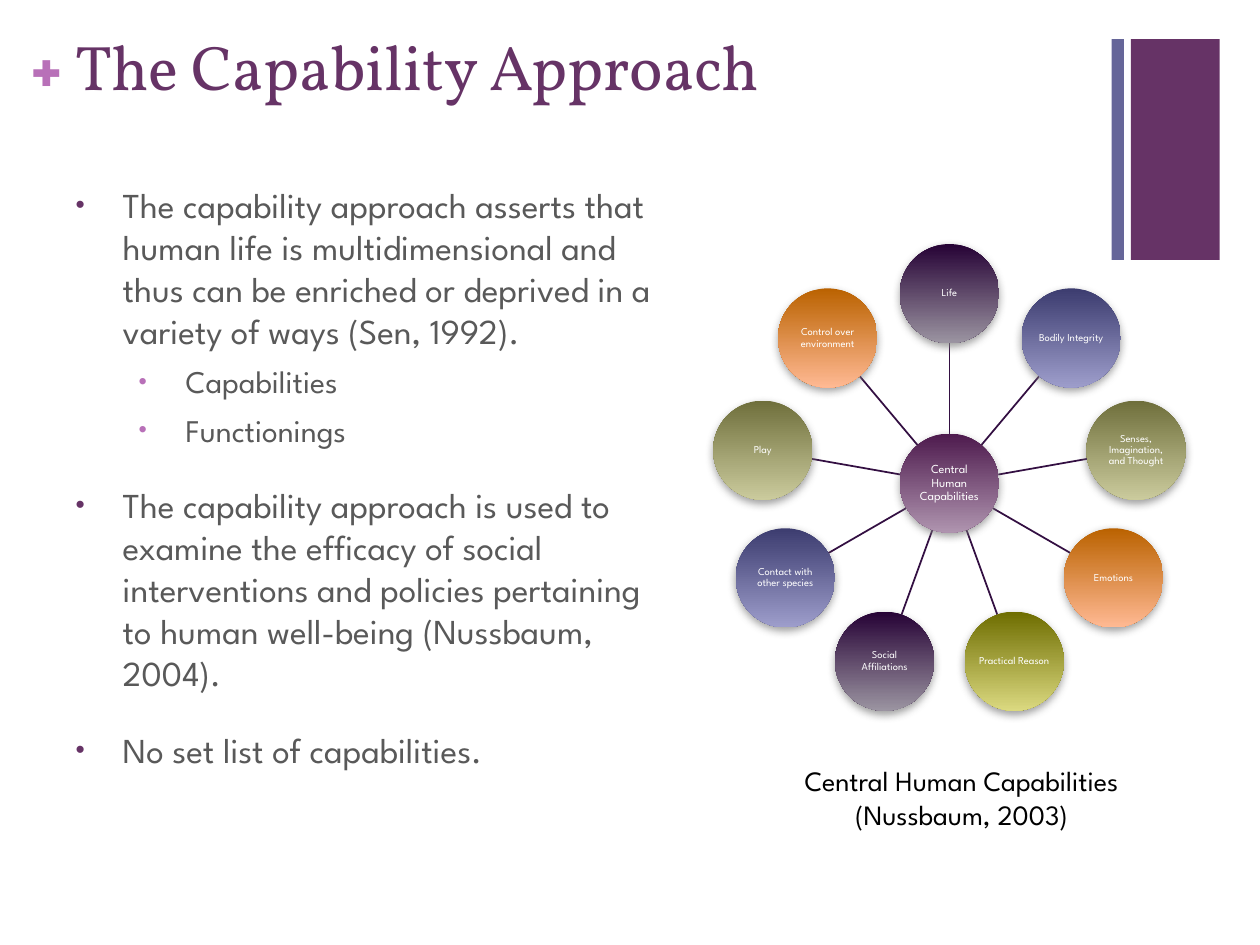
from math import cos, radians, sin

from lxml import etree
from pptx import Presentation
from pptx.dml.color import RGBColor
from pptx.enum.shapes import MSO_CONNECTOR, MSO_SHAPE
from pptx.enum.text import MSO_ANCHOR, MSO_AUTO_SIZE, PP_ALIGN
from pptx.oxml.ns import qn
from pptx.util import Cm, Pt

RECT, OVAL = MSO_SHAPE.RECTANGLE, MSO_SHAPE.OVAL
STRAIGHT = MSO_CONNECTOR.STRAIGHT
TOP, MIDDLE = MSO_ANCHOR.TOP, MSO_ANCHOR.MIDDLE
LEFT, CENTER = PP_ALIGN.LEFT, PP_ALIGN.CENTER
NO_FIT = MSO_AUTO_SIZE.NONE
SANS, SERIF = "League Spartan", "Vollkorn"
PURPLE, VIOLET, BLUE = "663366", "B870B8", "666699"


def rgb(value):
    return RGBColor.from_string(value)


def add_run(p, text, size, color, font=SANS, bold=False):
    r = p.add_run()
    r.text = text
    r.font.size = Pt(size)
    r.font.name = font
    r.font.bold = bold
    r.font.color.rgb = rgb(color)


prs = Presentation()
prs.slide_width, prs.slide_height = Cm(25.4), Cm(19.05)
s = prs.slides.add_slide(prs.slide_layouts[1])

for left, width, color in [(22.8, 1.79, PURPLE), (22.41, 0.25, BLUE)]:
    sp = s.shapes.add_shape(RECT, Cm(left), Cm(0.79), Cm(width), Cm(4.45))
    sp.shadow.inherit = False
    sp.fill.solid()
    sp.fill.fore_color.rgb = rgb(color)
    sp.line.fill.background()

sp = s.shapes.add_textbox(Cm(0.61), Cm(0.64), Cm(0.74), Cm(1.55))
tf = sp.text_frame
tf.margin_left = tf.margin_right = tf.margin_top = tf.margin_bottom = 0
add_run(tf.paragraphs[0], "+", 36, VIOLET, bold=True)

title = s.shapes.title
title.left, title.top, title.width, title.height = Cm(1.27), Cm(0.43), Cm(21.77), Cm(3.81)
tf = title.text_frame
tf.auto_size = NO_FIT
tf.vertical_anchor = TOP
p = tf.paragraphs[0]
p.alignment = LEFT
add_run(p, "The Capability Approach", 36, PURPLE, SERIF)

body = s.placeholders[1]
body.left, body.top, body.width, body.height = Cm(1.27), Cm(3.58), Cm(12.29), Cm(13.49)
tf = body.text_frame
tf.auto_size = NO_FIT
points = [
    (0, "The capability approach asserts that human life is multidimensional and thus "
        "can be enriched or deprived in a variety of ways (Sen, 1992)."),
    (1, "Capabilities"),
    (1, "Functionings"),
    (0, "The capability approach is used to examine the efficacy of social interventions "
        "and policies pertaining to human well-being (Nussbaum, 2004)."),
    (0, "No set list of capabilities."),
]
levels = [(20, 20, 0.95, PURPLE), (18, 6, 2.22, VIOLET)]
for i, (level, text) in enumerate(points):
    size, before, indent, color = levels[level]
    p = tf.paragraphs[0] if i == 0 else tf.add_paragraph()
    p.level = level
    p.space_before = Pt(before)
    add_run(p, text, size, "595959")
    pPr = p._p.get_or_add_pPr()
    pPr.set("marL", str(Cm(indent)))
    pPr.set("indent", str(Cm(-0.95)))
    clr = etree.SubElement(pPr, qn("a:buClr"))
    etree.SubElement(clr, qn("a:srgbClr"), val=color)
    etree.SubElement(pPr, qn("a:buSzPct"), val="75000")
    etree.SubElement(pPr, qn("a:buFont"), typeface="Arial")
    etree.SubElement(pPr, qn("a:buChar"), char="•")

cx, cy, orbit, radius = 19.14, 9.74, 3.82, 1
plum, indigo = ("260235", "9B94A1"), ("3C3C6F", "9D9DCB")
sage, orange, olive = ("6F6F3C", "CBCB9D"), ("BA6200", "FFB993"), ("6E6D00", "DBD980")
capabilities = [
    ("Life", plum),
    ("Bodily Integrity", indigo),
    ("Senses, Imagination, and Thought", sage),
    ("Emotions", orange),
    ("Practical Reason", olive),
    ("Social Affiliations", plum),
    ("Contact with other species", indigo),
    ("Play", sage),
    ("Control over environment", orange),
]
wheel = s.shapes.add_group_shape()
circles = [(cx, cy, "Central Human Capabilities", 7, ("4D1A4D", "AF94AF"))]
for i, (text, colors) in enumerate(capabilities):
    angle = radians(360 / len(capabilities) * i - 90)
    dx, dy = cos(angle), sin(angle)
    circles.append((cx + orbit * dx, cy + orbit * dy, text, 6, colors))
    near, far = radius, orbit - radius
    spoke = wheel.shapes.add_connector(STRAIGHT, Cm(cx + near * dx), Cm(cy + near * dy),
                                       Cm(cx + far * dx), Cm(cy + far * dy))
    spoke.line.color.rgb = rgb("330F42")
    spoke.line.width = Pt(1)
    etree.SubElement(spoke._element.spPr, qn("a:effectLst"))

for x, y, text, size, colors in circles:
    sp = wheel.shapes.add_shape(OVAL, Cm(x - radius), Cm(y - radius), Cm(2 * radius), Cm(2 * radius))
    sp.fill.gradient()
    sp.fill.gradient_angle = 270
    for stop, color, position in zip(sp.fill.gradient_stops, colors, (0, 1)):
        stop.color.rgb = rgb(color)
        stop.position = position
    sp.line.fill.background()
    sp.shadow.inherit = False
    effects = sp._element.spPr.find(qn("a:effectLst"))
    shadow = etree.SubElement(effects, qn("a:outerShdw"), blurRad=str(Pt(5)),
                              dist=str(Pt(2)), dir="5400000", rotWithShape="0")
    clr = etree.SubElement(shadow, qn("a:srgbClr"), val="808080")
    etree.SubElement(clr, qn("a:alpha"), val="75000")
    tf = sp.text_frame
    tf.word_wrap = True
    tf.vertical_anchor = MIDDLE
    tf.margin_left = tf.margin_right = tf.margin_top = tf.margin_bottom = 0
    p = tf.paragraphs[0]
    p.alignment = CENTER
    p.line_spacing = 0.9
    add_run(p, text, size, "FFFFFF")

sp = s.shapes.add_textbox(Cm(15.32), Cm(15.27), Cm(8.13), Cm(1.63))
tf = sp.text_frame
tf.word_wrap = True
p = tf.paragraphs[0]
p.alignment = CENTER
add_run(p, "Central Human Capabilities (Nussbaum, 2003)", 16, "000000")

prs.save("out.pptx")
